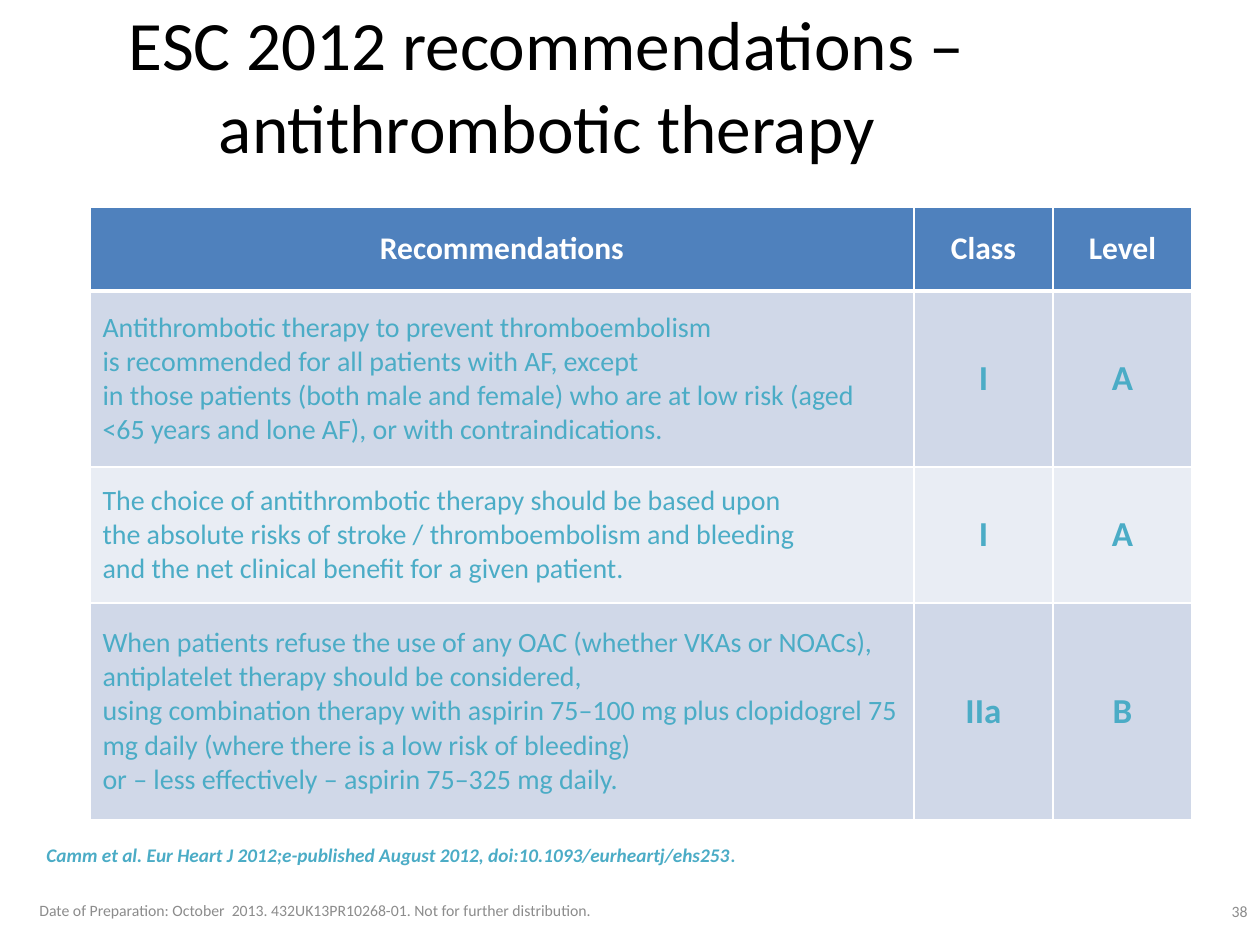
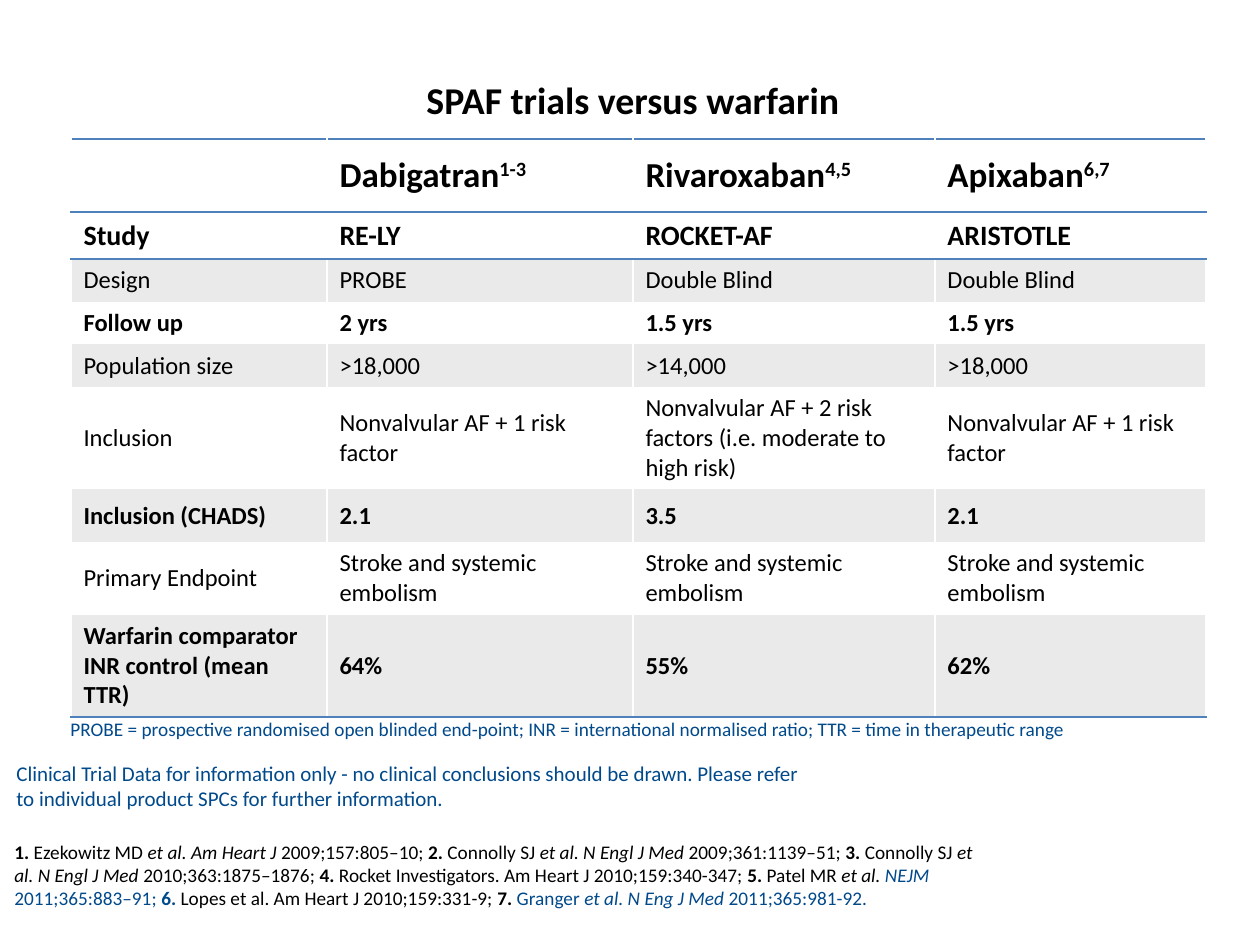
from dataclasses import dataclass

from lxml.etree import SubElement
from pptx import Presentation
from pptx.dml.color import RGBColor as Rgb
from pptx.enum.text import MSO_ANCHOR as Anchor, MSO_AUTO_SIZE as Fit, PP_ALIGN as Align
from pptx.oxml.ns import qn
from pptx.util import Emu, Pt

SCALE = 914400 / 126
PLAIN = "{2D5ABB26-0587-4C30-8999-92F81FD0307C}"


@dataclass(frozen=True)
class Theme:
    font: str = "Calibri"
    black: str = "000000"
    white: str = "FFFFFF"
    grey: str = "8C8C8C"
    blue: str = "4F81BD"
    teal: str = "4BACC6"
    navy: str = "00498B"
    dark: str = "D0D8E8"
    pale: str = "E9EDF4"
    band: str = "EAEAEA"
    title: float = 39.6
    head: float = 21.6
    mark: float = 20
    label: float = 18
    text: float = 16
    cell: float = 14
    note: float = 12
    cite: float = 11
    stop: float = 10.5
    foot: float = 9


T = Theme()


@dataclass(frozen=True)
class Look:
    size: float
    color: str = T.black
    bold: bool = False
    align: Align = Align.LEFT


ADVICE = [
    ["Recommendations", "Class", "Level"],
    ["Antithrombotic therapy to prevent thromboembolism\n"
     "is recommended for all patients with AF, except\n"
     "in those patients (both male and female) who are at low risk "
     "(aged <65 years and lone AF), or with contraindications.", "I", "A"],
    ["The choice of antithrombotic therapy should be based upon\n"
     "the absolute risks of stroke / thromboembolism and bleeding\n"
     "and the net clinical benefit for a given patient.", "I", "A"],
    [["When patients refuse the use of any OAC (whether VKAs or NOACs), "
      "antiplatelet therapy should be considered,",
      "using combination therapy with aspirin 75–100 mg plus clopidogrel "
      "75 mg daily (where there is a low risk of bleeding)",
      "or – less effectively – aspirin 75–325 mg daily."], "IIa", "B"],
]

TRIALS = [
    ["", [[("Dabigatran", ""), ("1-3", "^")]],
     [[("Rivaroxaban", ""), ("4,5", "^")]], [[("Apixaban", ""), ("6,7", "^")]]],
    ["Study", "RE-LY", "ROCKET-AF", "ARISTOTLE"],
    ["Design", "PROBE", "Double Blind", "Double Blind"],
    ["Follow up", "2 yrs", "1.5 yrs", "1.5 yrs"],
    ["Population size", ">18,000", ">14,000", ">18,000"],
    ["Inclusion", "Nonvalvular AF + 1 risk factor",
     "Nonvalvular AF + 2 risk factors (i.e. moderate to high risk)",
     "Nonvalvular AF + 1 risk factor"],
    ["Inclusion (CHADS)", "2.1", "3.5", "2.1"],
    ["Primary Endpoint"] + ["Stroke and systemic embolism"] * 3,
    ["Warfarin comparator INR control (mean TTR)", "64%", "55%", "62%"],
]
STRONG = {0, 1, 3, 6, 8}

REFS = [
    ("1.", "b"), (" Ezekowitz MD ", ""), ("et al. Am Heart J ", "i"),
    ("2009;157:805–10; ", ""), ("2.", "b"), (" Connolly SJ ", ""),
    ("et al. N Engl J Med ", "i"), ("2009;361:1139–51; ", ""),
    ("3. ", "b"), ("Connolly SJ ", ""), ("et al. N Engl J Med ", "i"),
    ("2010;363:1875–1876; ", ""), ("4. ", "b"),
    ("Rocket Investigators. Am Heart J 2010;159:340-347; ", ""),
    ("5. ", "b"), ("Patel MR ", ""), ("et al. ", "i"), ("NEJM ", "in"),
    ("2011;365:883–91; ", "n"), ("6. ", "bn"),
    ("Lopes et al. Am Heart J 2010;159:331-9; ", ""), ("7. ", "b"),
    ("Granger ", "n"), ("et al. N Eng J Med ", "in"), ("2011;365:981-92.", "n"),
]


def px(n):
    return Emu(round(n * SCALE))


def add_run(para, text, flags, look, size=None):
    for i, line in enumerate(text.split("\n")):
        if i:
            para.add_line_break()
        run = para.add_run()
        run.text = line
        font = run.font
        font.name, font.size = T.font, Pt(size or look.size)
        font.bold = look.bold or "b" in flags
        font.italic = "i" in flags
        font.color.rgb = Rgb.from_string(T.navy if "n" in flags else look.color)
        if "^" in flags:
            font._element.set("baseline", "30000")


def write(frame, body, look):
    paras = [body] if isinstance(body, str) else body
    for i, runs in enumerate(paras):
        para = frame.add_paragraph() if i else frame.paragraphs[0]
        para.alignment = look.align
        for run in [(runs, "")] if isinstance(runs, str) else runs:
            add_run(para, run[0], run[1], look, *run[2:])


def place(shape, box):
    shape.left, shape.top, shape.width, shape.height = map(px, box)


def add_title(slide, box, text, look):
    shape = slide.shapes.title
    place(shape, box)
    frame = shape.text_frame
    frame.auto_size, frame.word_wrap = Fit.NONE, True
    frame.vertical_anchor = Anchor.MIDDLE
    write(frame, text, look)


def add_text(slide, box, body, look, anchor=Anchor.TOP, fit=Fit.NONE):
    frame = slide.shapes.add_textbox(*map(px, box)).text_frame
    frame.word_wrap, frame.auto_size = True, fit
    frame.vertical_anchor = anchor
    write(frame, body, look)
    return frame


def add_edge(cell, side, color, width):
    line = SubElement(cell._tc.get_or_add_tcPr(), qn(f"a:ln{side}"), w=str(Pt(width)))
    fill = SubElement(line, qn("a:solidFill"))
    SubElement(fill, qn("a:srgbClr"), val=color)


def add_grid(slide, spot, cols, rows, data, style):
    box = (*spot, sum(cols), sum(rows))
    table = slide.shapes.add_table(len(rows), len(cols), *map(px, box)).table
    table.first_row = table.horz_banding = False
    table._tbl.tblPr.find(qn("a:tableStyleId")).text = PLAIN
    for col, width in zip(table.columns, cols):
        col.width = px(width)
    for r, (height, line) in enumerate(zip(rows, data)):
        table.rows[r].height = px(height)
        for c, body in enumerate(line):
            cell = table.cell(r, c)
            look, fill, edges = style(r, c)
            for side in "LRTB":
                if side in edges:
                    add_edge(cell, side, *edges[side])
            if fill:
                cell.fill.solid()
                cell.fill.fore_color.rgb = Rgb.from_string(fill)
            else:
                cell.fill.background()
            cell.vertical_anchor = Anchor.MIDDLE
            if body:
                write(cell.text_frame, body, look)


def advice_style(r, c):
    edges = {side: (T.white, 1) for side in "LRTB"}
    if r == 0:
        edges["B"] = (T.white, 3)
        return Look(T.label, T.white, True, Align.CENTER), T.blue, edges
    if r == 1:
        edges["T"] = (T.white, 3)
    look = Look(T.mark, T.teal, True, Align.CENTER) if c else Look(T.text, T.teal)
    return look, T.dark if r % 2 else T.pale, edges


def trial_style(r, c):
    edges = {side: (T.white, 1) for side in "LR"}
    rule = (T.blue, 1.5)
    if r < 2:
        edges["T"] = rule
    if r in (0, len(TRIALS) - 1):
        edges["B"] = rule
    size = {0: T.mark, 1: T.text}.get(r, T.cell)
    fill = T.band if r and r % 2 == 0 else T.white if r == 1 else None
    return Look(size, bold=r in STRONG), fill, edges


def add_foot(slide, box, text, page):
    x, y, w, h = box
    add_text(slide, (x, y, w // 2, h), text,
             Look(T.foot, T.grey, align=Align.CENTER), Anchor.MIDDLE)
    add_text(slide, (x + w - 294, y + 1, 294, h - 3), page,
             Look(T.foot, T.grey, align=Align.RIGHT))


def make_advice(slide):
    add_title(slide, (63, 32, 968, 105),
              "ESC 2012 recommendations – antithrombotic therapy",
              Look(T.title, align=Align.CENTER))
    add_grid(slide, (90, 207), (824, 139, 139), (84, 176, 136, 217),
             ADVICE, advice_style)
    cite = [("Camm et al. Eur Heart J 2012;e-published August 2012, "
             "doi:10.1093/eurheartj/ehs253", "i"), (".", "i", T.stop)]
    frame = add_text(slide, (34, 839, 1076, 34), [cite],
                     Look(T.cite, T.teal, True), Anchor.BOTTOM, Fit.SHAPE_TO_FIT_TEXT)
    frame.paragraphs[0].line_spacing = 0.9
    add_foot(slide, (0, 895, 1260, 31),
             "Date of Preparation: October  2013. 432UK13PR10268-01. "
             "Not for further distribution.", "38")


def make_trials(slide):
    add_title(slide, (57, 74, 1152, 50), "SPAF trials versus warfarin",
              Look(T.head, bold=True, align=Align.CENTER))
    add_grid(slide, (71, 139), (256, 306, 302, 271),
             (73, 46, 43, 42, 43, 101, 53, 72, 101), TRIALS, trial_style)
    grow = Fit.SHAPE_TO_FIT_TEXT
    add_text(slide, (58, 711, 1147, 36),
             "PROBE = prospective randomised open blinded end-point; "
             "INR = international normalised ratio; TTR = time in therapeutic range",
             Look(T.cite, T.navy), Anchor.BOTTOM, grow)
    add_text(slide, (4, 754, 815, 63),
             "Clinical Trial Data for information only - no clinical conclusions "
             "should be drawn. Please refer to individual product SPCs for "
             "further information.", Look(T.note, T.navy), Anchor.BOTTOM, grow)
    add_text(slide, (2, 834, 993, 83), [REFS], Look(T.cite), fit=grow)


def main():
    deck = Presentation()
    deck.slide_width, deck.slide_height = px(1260), px(945)
    for make in (make_advice, make_trials):
        make(deck.slides.add_slide(deck.slide_layouts[5]))
    deck.save("out.pptx")


if __name__ == "__main__":
    main()
